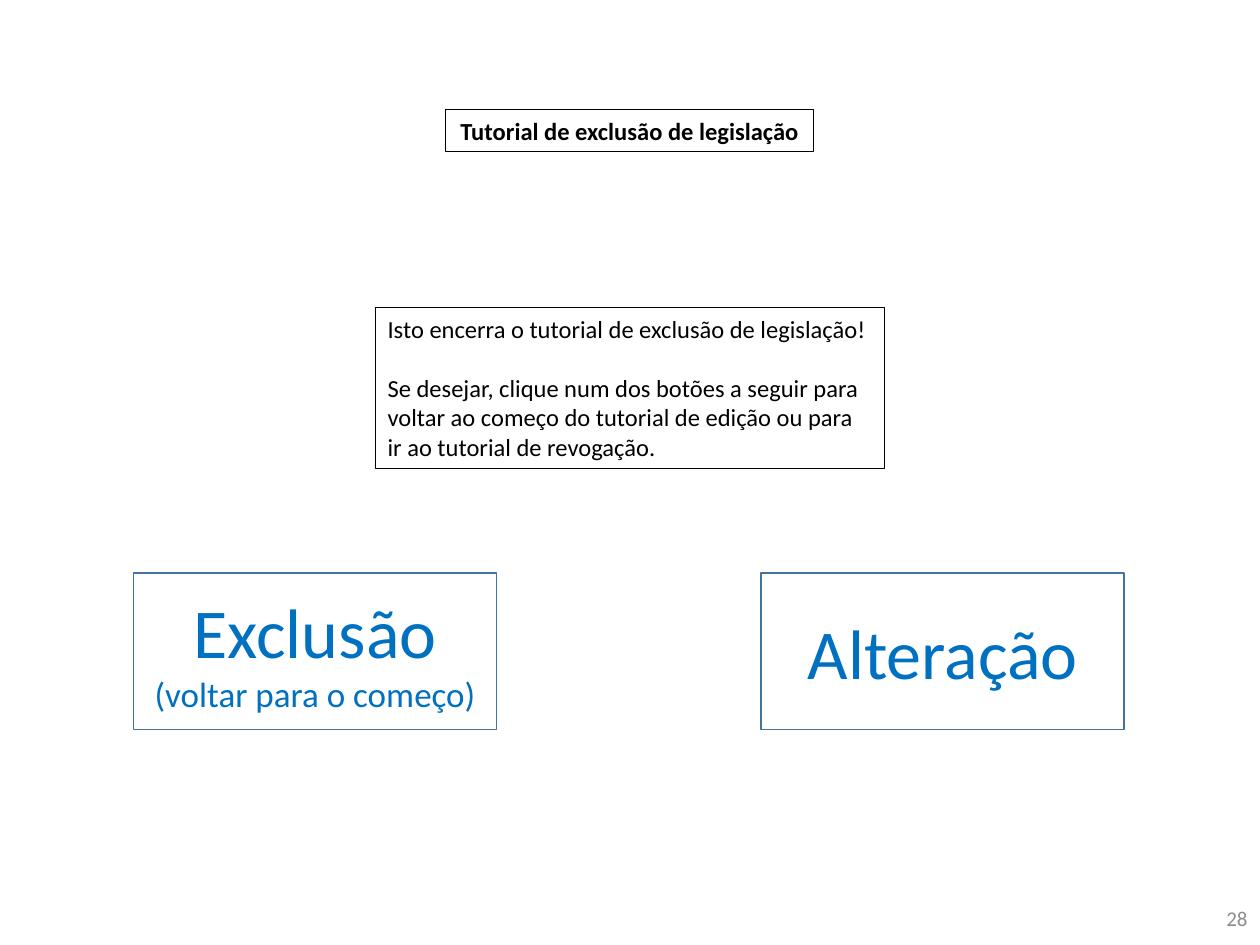
from pptx import Presentation
from pptx import util as u
from pptx.dml.color import RGBColor
from pptx.enum import shapes, text

Pt = u.Pt
BLACK, WHITE, BLUE, EDGE, GREY = "000000", "FFFFFF", "0070C0", "43739E", "8C8C8C"
LEFT, MID, RIGHT = text.PP_ALIGN.LEFT, text.PP_ALIGN.CENTER, text.PP_ALIGN.RIGHT


def color(fmt, code):
    fmt.rgb = RGBColor.from_string(code)


def write(box, lines, tint, align, anchor, bold=False, gap=0):
    """Fill a box with (words, size) lines, with a gap between paragraphs."""
    frame = box.text_frame
    frame.word_wrap = True
    frame.vertical_anchor = anchor
    frame.text = "\n".join(words for words, size in lines)
    for i, (para, (words, size)) in enumerate(zip(frame.paragraphs, lines)):
        para.alignment = align
        if i and gap:
            para.space_before = Pt(gap)
        for run in para.runs:
            run.font.name = "Calibri"
            run.font.size = Pt(size)
            run.font.bold = bold
            color(run.font.color, tint)


def frame(slide, place, edge, width, fill=None):
    """Add an outlined rectangle."""
    box = slide.shapes.add_shape(shapes.MSO_SHAPE.RECTANGLE, *map(Pt, place))
    box.shadow.inherit = False
    if fill:
        box.fill.solid()
        color(box.fill.fore_color, fill)
    else:
        box.fill.background()
    color(box.line.color, edge)
    box.line.width = Pt(width)
    return box


def button(slide, left, lines):
    box = frame(slide, (left, 327.6, 207.4, 89.3), EDGE, 1)
    write(box, lines, BLUE, MID, text.MSO_ANCHOR.MIDDLE)


def main():
    deck = Presentation()
    deck.slide_width, deck.slide_height = Pt(720), Pt(540)
    slide = deck.slides.add_slide(deck.slide_layouts[6])

    # Page number
    page = slide.shapes.add_textbox(Pt(558), Pt(510.5), Pt(162), Pt(28.8))
    write(page, [("28", 12)], GREY, RIGHT, text.MSO_ANCHOR.MIDDLE)

    # Closing message
    note = frame(slide, (214.4, 175.7, 291, 92), BLACK, 0.75, WHITE)
    write(note, [
        ("Isto encerra o tutorial de exclusão de legislação!", 14),
        ("Se desejar, clique num dos botões a seguir para voltar ao começo "
         "do tutorial de edição ou para ir ao tutorial de revogação.", 14),
    ], BLACK, LEFT, text.MSO_ANCHOR.TOP, gap=17)

    # Buttons
    button(slide, 434.9, [("Alteração", 40)])
    button(slide, 76.3, [("Exclusão", 40), ("(voltar para o começo)", 20)])

    # Title
    title = frame(slide, (254.7, 62.6, 210.2, 24.2), BLACK, 0.75)
    write(title, [("Tutorial de exclusão de legislação", 14)],
          BLACK, MID, text.MSO_ANCHOR.TOP, bold=True)

    deck.save("out.pptx")


if __name__ == "__main__":
    main()
